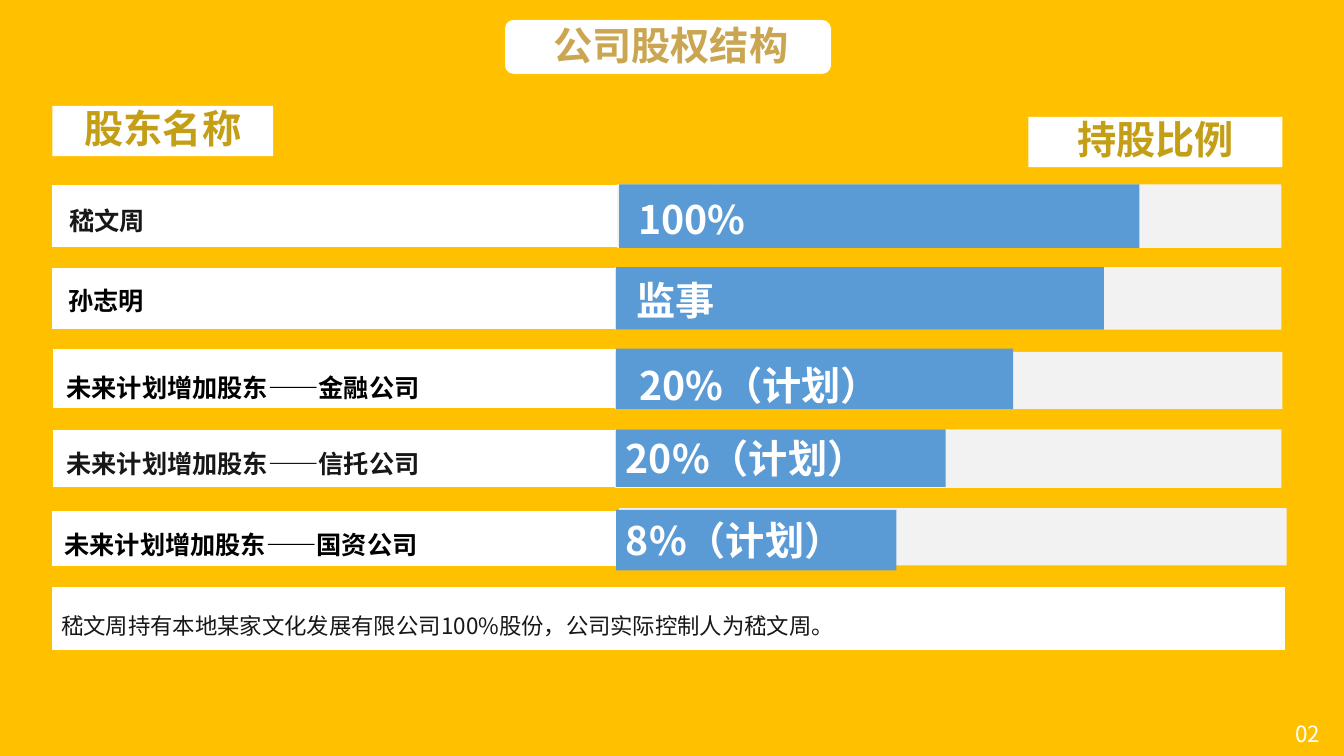
from pptx import Presentation
from pptx.dml.color import RGBColor
from pptx.enum.shapes import MSO_SHAPE
from pptx.enum.text import MSO_ANCHOR, PP_ALIGN
from pptx.oxml.ns import qn
from pptx.util import Inches, Pt
from lxml import etree

RECT, ROUNDED = MSO_SHAPE.RECTANGLE, MSO_SHAPE.ROUNDED_RECTANGLE
TOP, MIDDLE, BOTTOM = MSO_ANCHOR.TOP, MSO_ANCHOR.MIDDLE, MSO_ANCHOR.BOTTOM
LEFT, CENTER = PP_ALIGN.LEFT, PP_ALIGN.CENTER

FONT = "Noto Sans CJK SC"
GOLD, WHITE, TRACK, BLUE = "FFC000", "FFFFFF", "F2F2F2", "5B9BD5"
HEADING, INK, BLACK = "C49F16", "181717", "000000"
DEFAULT_INSETS = (0.1, 0.05, 0.1, 0.05)
TIGHT_INSETS = (0, 0, 0.1, 0)

# name, colour, name position, share, share box (None: inside the bar),
# then left, top, width, height of the name panel, the track and the bar
SHAREHOLDERS = [
    ("嵇文周", INK, (0.69, 2.04), "100%", (6.23, 1.89, 1.91, 0.57),
     (0.51, 1.83, 6.56, 0.63), (6.12, 1.83, 6.59, 0.63), (6.14, 1.83, 5.16, 0.63)),
    ("孙志明", BLACK, (0.68, 2.83), "监事", (6.21, 2.69, 1.68, 0.57),
     (0.51, 2.65, 6.56, 0.62), (6.1, 2.65, 6.61, 0.62), (6.11, 2.65, 4.84, 0.62)),
    ("未来计划增加股东——金融公司", BLACK, (0.66, 3.69), "20%（计划）", (6.24, 3.54, 3.11, 0.57),
     (0.52, 3.46, 6.56, 0.6), (6.1, 3.49, 6.62, 0.57), (6.11, 3.46, 3.94, 0.6)),
    ("未来计划增加股东——信托公司", INK, (0.66, 4.45), "20%（计划）", None,
     (0.52, 4.26, 6.56, 0.58), (6.1, 4.26, 6.61, 0.58), (6.11, 4.26, 3.27, 0.57)),
    ("未来计划增加股东——国资公司", BLACK, (0.64, 5.25), "8%（计划）", None,
     (0.51, 5.06, 6.56, 0.56), (6.14, 5.04, 6.62, 0.57), (6.11, 5.06, 2.78, 0.6)),
]


def rgb(color):
    return RGBColor.from_string(color)


def inches(box):
    return [Inches(length) for length in box]


def add_panel(slide, box, fill, line=None, kind=RECT):
    panel = slide.shapes.add_shape(kind, *inches(box))
    panel.shadow.inherit = False
    panel.fill.solid()
    panel.fill.fore_color.rgb = rgb(fill)
    if line:
        panel.line.color.rgb = rgb(line)
        panel.line.width = Pt(1)
    else:
        panel.line.fill.background()
    return panel


def write(holder, text, size, color, bold=True, anchor=TOP, align=LEFT,
          spacing=1.0, insets=DEFAULT_INSETS, wrap=True):
    frame = holder.text_frame
    frame.word_wrap = wrap
    frame.vertical_anchor = anchor
    (frame.margin_left, frame.margin_top,
     frame.margin_right, frame.margin_bottom) = inches(insets)
    frame.text = text
    paragraph = frame.paragraphs[0]
    paragraph.alignment = align
    paragraph.line_spacing = spacing
    run = paragraph.runs[0]
    run.font.name = FONT
    run.font.size = Pt(size)
    run.font.bold = bold
    run.font.color.rgb = rgb(color)
    # East Asian typeface
    east_asian = etree.SubElement(run.font._element, qn("a:ea"))
    east_asian.set("typeface", FONT)


def add_label(slide, box, text, size, color, **style):
    write(slide.shapes.add_textbox(*inches(box)), text, size, color, **style)


def add_column_heading(slide, box, text):
    write(add_panel(slide, box, WHITE), text, 28, HEADING,
          anchor=BOTTOM, align=CENTER, spacing=1.1)


def add_shareholder(slide, name, color, name_at, share, share_box,
                    name_panel, track, bar):
    add_panel(slide, name_panel, WHITE, GOLD)
    add_panel(slide, track, TRACK)
    share_bar = add_panel(slide, bar, BLUE)
    add_label(slide, (*name_at, 5.29, 0.3), name, 18, color,
              anchor=MIDDLE, insets=TIGHT_INSETS)
    if share_box:
        add_label(slide, share_box, share, 28, WHITE)
    else:
        write(share_bar, share, 28, WHITE,
              anchor=TOP if share.startswith("20") else MIDDLE)


def main():
    prs = Presentation()
    prs.slide_width, prs.slide_height = Inches(13.33), Inches(7.5)
    slide = prs.slides.add_slide(prs.slide_layouts[6])
    slide.background.fill.solid()
    slide.background.fill.fore_color.rgb = rgb(GOLD)

    # Title
    title_panel = add_panel(slide, (5, 0.19, 3.25, 0.55), WHITE, "FFC600", ROUNDED)
    title_panel.adjustments[0] = 0.17
    add_label(slide, (5.39, 0.22, 2.56, 0.53), "公司股权结构", 28, "CAA652",
              spacing=0.9, wrap=False)

    # Column headings
    add_column_heading(slide, (0.52, 1.05, 2.19, 0.5), "股东名称")
    add_column_heading(slide, (10.2, 1.16, 2.52, 0.5), "持股比例")

    # Shareholder rows
    for shareholder in SHAREHOLDERS:
        add_shareholder(slide, *shareholder)

    # Control statement
    statement = add_panel(slide, (0.51, 5.82, 12.24, 0.64), WHITE, GOLD)
    write(statement, "嵇文周持有本地某家文化发展有限公司100%股份，公司实际控制人为嵇文周。",
          16, INK, bold=False, anchor=MIDDLE, spacing=1.5)

    # Page number
    add_label(slide, (12.75, 7.14, 0.51, 0.31), "02", 16, WHITE,
              bold=False, anchor=MIDDLE, spacing=0.9)

    prs.save("out.pptx")


if __name__ == "__main__":
    main()
